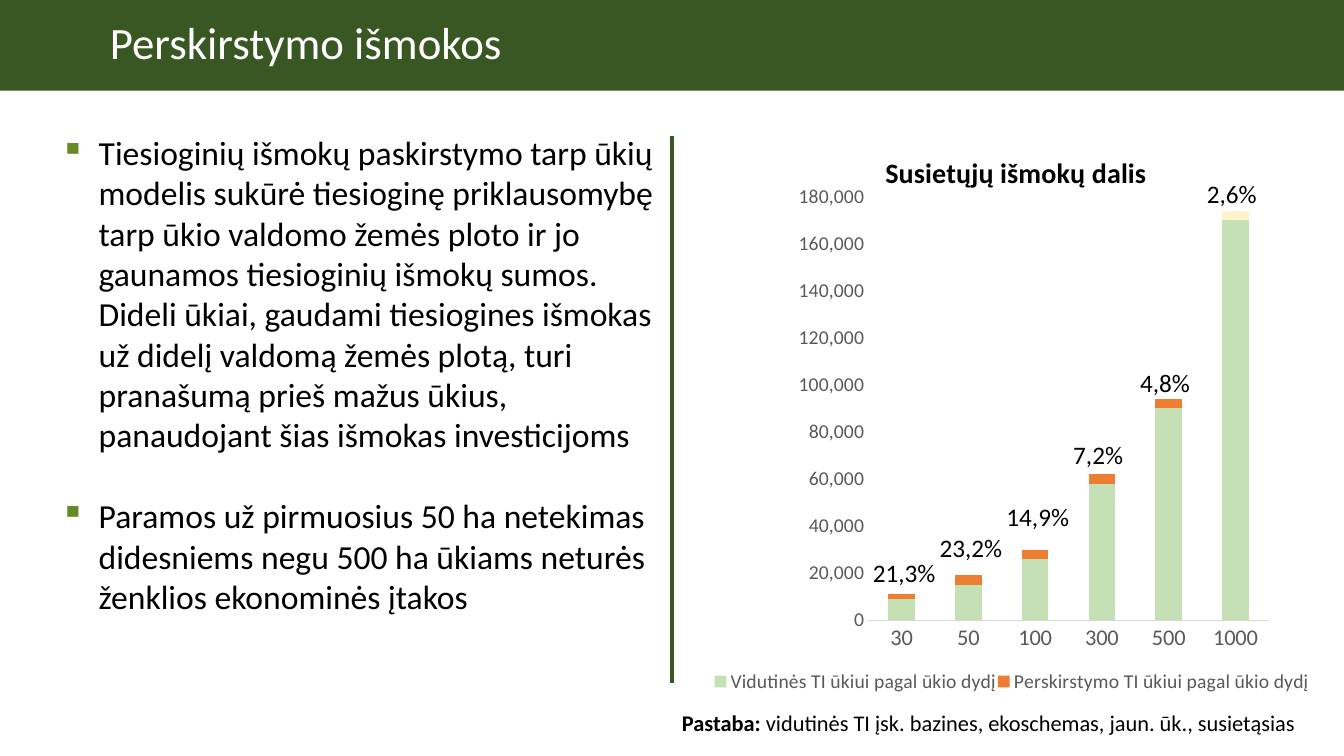
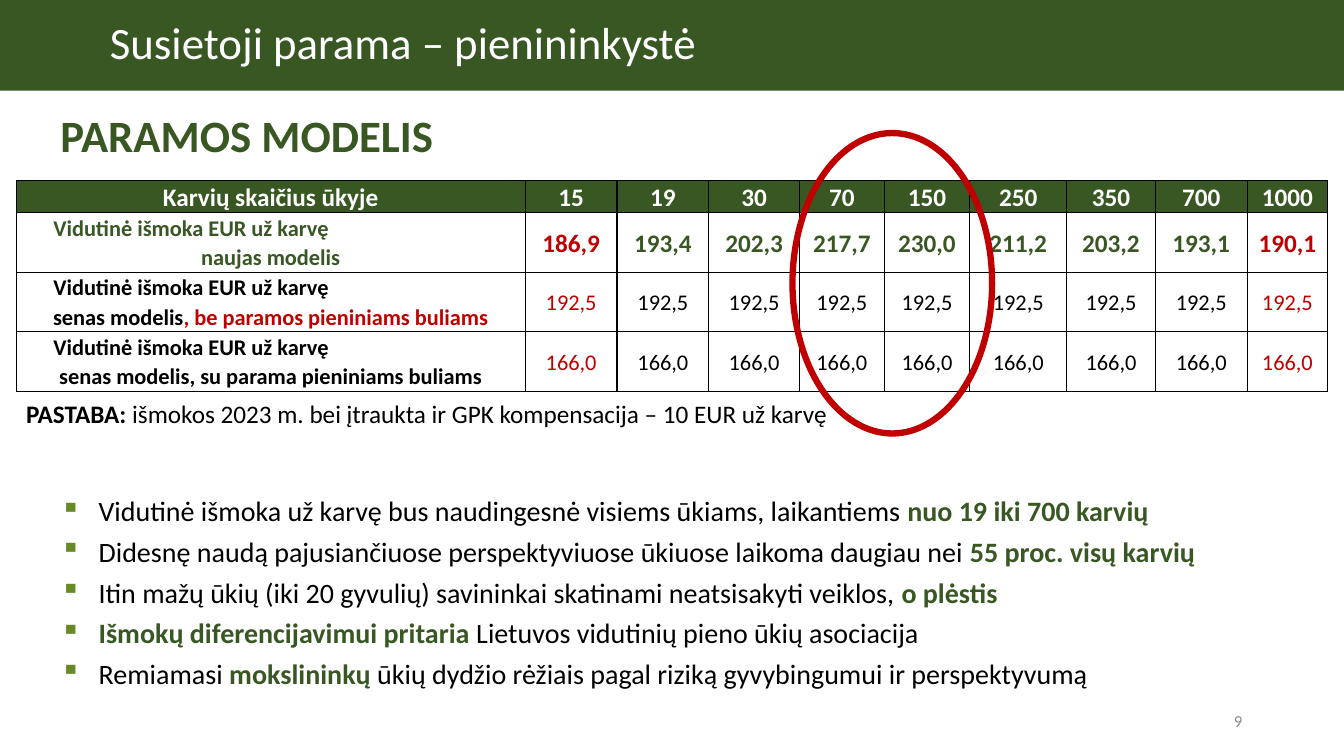
from dataclasses import dataclass

from lxml.etree import SubElement
from pptx import Presentation
from pptx.chart.data import CategoryChartData
from pptx.dml.color import RGBColor
from pptx.enum.chart import XL_CHART_TYPE, XL_LEGEND_POSITION, XL_TICK_MARK
from pptx.enum.shapes import MSO_CONNECTOR, MSO_SHAPE
from pptx.enum.text import MSO_ANCHOR, PP_ALIGN
from pptx.oxml import parse_xml
from pptx.oxml.ns import nsdecls, qn
from pptx.util import Inches, Pt


@dataclass(frozen=True)
class Theme:
    """Colours, font and type sizes shared by the slides."""
    font: str = "Calibri"
    green: str = "385723"
    bullet: str = "678A26"
    red: str = "C00000"
    black: str = "000000"
    white: str = "FFFFFF"
    grey: str = "595959"
    pale: str = "8C8C8C"
    rule: str = "D9D9D9"
    title: int = 32
    body: int = 24
    points: int = 20
    label: int = 18
    note: int = 16
    small: int = 14
    number: int = 12


T = Theme()
W, H = 13.33, 7.5
MID = W / 2
BAND = 0.12 * H

FARM_TITLE = "Perskirstymo išmokos"
FARM_POINTS = [
    [("Tiesioginių išmokų paskirstymo tarp ūkių modelis sukūrė tiesioginę priklausomybę "
      "tarp ūkio valdomo žemės ploto ir jo gaunamos tiesioginių išmokų sumos. Dideli ūkiai, "
      "gaudami tiesiogines išmokas už didelį valdomą žemės plotą, turi pranašumą prieš mažus "
      "ūkius, panaudojant šias išmokas investicijoms",)],
    [("Paramos už pirmuosius 50 ha netekimas didesniems negu 500 ha ūkiams neturės "
      "ženklios ekonominės įtakos",)],
]
FARM_NOTE = [("Pastaba: ", T.black, True),
             ("vidutinės TI įsk. bazines, ekoschemas, jaun. ūk., susietąsias",)]
CHART_TITLE = "Susietųjų išmokų dalis"
SIZES = ["30", "50", "100", "300", "500", "1000"]
SERIES = [
    ("Vidutinės TI ūkiui pagal ūkio dydį", "C5E0B4", [9000, 15000, 26000, 58000, 90000, 170000]),
    ("Perskirstymo TI ūkiui pagal ūkio dydį", "ED7D31", [2000, 4000, 4000, 4000, 4000, 4000]),
]
LAST_POINT = "FFF2CC"
SHARES = [("21,3%", 5.48), ("23,2%", 5.23), ("14,9%", 4.92),
          ("7,2%", 4.31), ("4,8%", 3.59), ("2,6%", 1.72)]
CHART = (7.07, 1.22, 5.93, 6.09)
PLOT = (0.26, 0.12, 0.67, 0.69)

MILK_TITLE = "Susietoji parama – pienininkystė"
MILK_HEADING = "PARAMOS MODELIS"
HEADER = ["Karvių skaičius ūkyje", "15", "19", "30", "70", "150", "250", "350", "700", "1000"]
ROW_LEAD = "Vidutinė išmoka EUR už karvę"
ROWS = [
    ([("naujas modelis", T.green, True)], T.green, True, T.label,
     ["186,9", "193,4", "202,3", "217,7", "230,0", "211,2", "203,2", "193,1", "190,1"]),
    ([("senas modelis", T.black, True), (", be paramos pieniniams buliams", T.red, True)],
     T.black, False, T.note, ["192,5"] * 9),
    ([("senas modelis, su parama pieniniams buliams", T.black, True)],
     T.black, False, T.note, ["166,0"] * 9),
]
COLS = [5.05, 0.91, 0.91, 0.9, 0.84, 0.85, 0.96, 0.88, 0.91, 0.8]
ROW_H = [0.32, 0.59, 0.59, 0.59]
MILK_NOTE = [("PASTABA: ", T.black, True),
             ("išmokos 2023 m. bei įtraukta ir GPK kompensacija – 10 EUR už karvę",)]
MILK_POINTS = [
    [("Vidutinė išmoka už karvę bus naudingesnė visiems ūkiams, laikantiems ",),
     ("nuo 19 iki 700 karvių", T.green, True)],
    [("Didesnę naudą pajusiančiuose perspektyviuose ūkiuose laikoma daugiau nei ",),
     ("55 proc. visų karvių", T.green, True)],
    [("Itin mažų ūkių (iki 20 gyvulių) savininkai skatinami neatsisakyti veiklos, ",),
     ("o plėstis", T.green, True)],
    [("Išmokų diferencijavimui pritaria", T.green, True),
     (" Lietuvos vidutinių pieno ūkių asociacija",)],
    [("Remiamasi ",), ("mokslininkų", T.green, True),
     (" ūkių dydžio rėžiais pagal riziką gyvybingumui ir perspektyvumą",)],
]


def rgb(color):
    return RGBColor.from_string(color)


def inches(box):
    return [Inches(v) for v in box]


def style(font, size, color=T.black, bold=False):
    font.name, font.size, font.bold = T.font, Pt(size), bold
    font.color.rgb = rgb(color)


def write(p, runs, size):
    for text, *look in runs:
        r = p.add_run()
        r.text = text
        style(r.font, size, *look)


def add_text(s, box, paragraphs, size, wrap=True):
    tf = s.shapes.add_textbox(*inches(box)).text_frame
    tf.word_wrap = wrap
    for i, runs in enumerate(paragraphs):
        write(tf.add_paragraph() if i else tf.paragraphs[0], runs, size)
    return tf


def add_points(s, box, points, size, gap):
    for i, p in enumerate(add_text(s, box, points, size).paragraphs):
        p.space_before = Pt(gap if i else 0)
        pPr = p._p.get_or_add_pPr()
        pPr.set("marL", str(Inches(0.88)))
        pPr.set("indent", str(Inches(-0.38)))
        SubElement(SubElement(pPr, qn("a:buClr")), qn("a:srgbClr")).set("val", T.bullet)
        SubElement(pPr, qn("a:buChar")).set("char", "▪")


def add_slide(prs, title):
    s = prs.slides.add_slide(prs.slide_layouts[6])
    sp = s.shapes.add_shape(MSO_SHAPE.RECTANGLE, *inches((0, 0, W, BAND)))
    sp.shadow.inherit = False
    sp.fill.solid()
    sp.fill.fore_color.rgb = rgb(T.green)
    sp.line.fill.background()
    tf = sp.text_frame
    tf.margin_left = Inches(1.09)
    tf.vertical_anchor = MSO_ANCHOR.MIDDLE
    p = tf.paragraphs[0]
    p.alignment, p.line_spacing = PP_ALIGN.LEFT, 0.9
    write(p, [(title, T.white)], T.title)
    return s


def layout_xml(*values, inner=False):
    target = '<c:layoutTarget val="inner"/>' if inner else ""
    modes = "".join(f'<c:{k}Mode val="edge"/>' for k in "xy")
    parts = "".join(f'<c:{k} val="{v}"/>' for k, v in zip("xywh", values))
    return parse_xml(f'<c:layout {nsdecls("c")}><c:manualLayout>{target}{modes}{parts}'
                     "</c:manualLayout></c:layout>")


def place(parent, layout, after=None):
    for old in parent.findall(qn("c:layout")):
        parent.remove(old)
    if after is None:
        parent.insert(0, layout)
    else:
        parent.find(qn(after)).addnext(layout)


def add_payments_chart(s):
    data = CategoryChartData(number_format="#,##0")
    data.categories = SIZES
    for name, _, values in SERIES:
        data.add_series(name, values)
    chart = s.shapes.add_chart(XL_CHART_TYPE.COLUMN_STACKED, *inches(CHART), data).chart
    style(chart.font, 10)
    chart.has_title = True
    tf = chart.chart_title.text_frame
    tf.text = CHART_TITLE
    style(tf.paragraphs[0].runs[0].font, T.points, T.black, True)
    chart.has_legend = True
    chart.legend.position = XL_LEGEND_POSITION.BOTTOM
    chart.legend.include_in_layout = False
    style(chart.legend.font, T.small, T.grey)

    plot = chart.plots[0]
    plot.gap_width, plot.overlap, plot.vary_by_categories = 150, 100, False
    for series, (_, color, _) in zip(plot.series, SERIES):
        series.format.fill.solid()
        series.format.fill.fore_color.rgb = rgb(color)
    fill = plot.series[1].points[len(SIZES) - 1].format.fill
    fill.solid()
    fill.fore_color.rgb = rgb(LAST_POINT)

    for axis, size in ((chart.category_axis, T.note), (chart.value_axis, T.small)):
        axis.major_tick_mark = axis.minor_tick_mark = XL_TICK_MARK.NONE
        axis.has_major_gridlines = False
        style(axis.tick_labels.font, size, T.grey)
    line = chart.category_axis.format.line
    line.color.rgb, line.width = rgb(T.rule), Pt(0.75)
    axis = chart.value_axis
    axis.format.line.fill.background()
    axis.minimum_scale, axis.maximum_scale, axis.major_unit = 0, 180000, 20000
    axis.tick_labels.number_format = "#,##0"
    axis.tick_labels.number_format_is_linked = False

    root = chart.element.find(qn("c:chart"))
    place(root.find(qn("c:title")), layout_xml(0.28, 0.04), "c:tx")
    place(root.find(qn("c:legend")), layout_xml(0, 0.88, 1, 0.06), "c:legendPos")
    place(root.find(qn("c:plotArea")), layout_xml(*PLOT, inner=True))


def farm_slide(prs):
    s = add_slide(prs, FARM_TITLE)
    add_points(s, (0, 1.26, MID, 5.15), FARM_POINTS, T.body, 29)
    divider = s.shapes.add_connector(MSO_CONNECTOR.STRAIGHT, *inches((MID, 1.35, MID, 6.78)))
    divider.line.color.rgb, divider.line.width = rgb(T.green), Pt(2.25)
    SubElement(divider._element.spPr, qn("a:effectLst"))
    add_payments_chart(s)
    step = CHART[2] * PLOT[2] / len(SIZES)
    for i, (share, top) in enumerate(SHARES):
        add_text(s, (8.56 + i * step, top, 0.86, 0.4), [[(share,)]], T.label)
    add_text(s, (MID, 6.99, MID, 0.37), [FARM_NOTE], T.note)


def format_cell(cell, fill=None):
    cell.vertical_anchor = MSO_ANCHOR.MIDDLE
    cell.margin_left = cell.margin_right = Inches(0.07)
    cell.margin_top = cell.margin_bottom = 0
    if fill:
        cell.fill.solid()
        cell.fill.fore_color.rgb = rgb(fill)
    else:
        cell.fill.background()
    tcPr = cell._tc.get_or_add_tcPr()
    for i, side in enumerate("LRTB"):
        tcPr.insert(i, parse_xml(
            f'<a:ln{side} {nsdecls("a")} w="{Pt(1)}"><a:solidFill>'
            f'<a:srgbClr val="{T.black}"/></a:solidFill></a:ln{side}>'))
    for p in cell.text_frame.paragraphs:
        p.alignment, p.line_spacing = PP_ALIGN.CENTER, 1.07


def add_payments_table(s):
    box = (0.16, 1.79, sum(COLS), sum(ROW_H))
    table = s.shapes.add_table(len(ROW_H), len(COLS), *inches(box)).table
    table.first_row = table.horz_banding = False
    for col, width in zip(table.columns, COLS):
        col.width = Inches(width)
    for row, height in zip(table.rows, ROW_H):
        row.height = Inches(height)
    for j, text in enumerate(HEADER):
        cell = table.cell(0, j)
        write(cell.text_frame.paragraphs[0], [(text, T.white, True)], T.label)
        format_cell(cell, T.green)
    for i, (model, color, bold, size, values) in enumerate(ROWS, 1):
        cell = table.cell(i, 0)
        tf = cell.text_frame
        write(tf.paragraphs[0], [(ROW_LEAD, color, True)], T.note)
        write(tf.add_paragraph(), model, T.note)
        format_cell(cell)
        lead = tf.paragraphs[0]
        lead.alignment = PP_ALIGN.LEFT
        lead._p.get_or_add_pPr().set("marL", str(Inches(0.3)))
        for j, value in enumerate(values, 1):
            cell = table.cell(i, j)
            edge = j in (1, len(values))
            write(cell.text_frame.paragraphs[0], [(value, T.red if edge else color, bold)], size)
            format_cell(cell)


def milk_slide(prs):
    s = add_slide(prs, MILK_TITLE)
    number = add_text(s, (9.42, 6.95, 3, 0.4), [[("9", T.pale)]], T.number)
    number.vertical_anchor = MSO_ANCHOR.MIDDLE
    number.paragraphs[0].alignment = PP_ALIGN.RIGHT
    add_text(s, (0.5, 1.02, 6, 0.64), [[(MILK_HEADING, T.green, True)]], T.title)
    add_points(s, (0, 4.85, 12.26, 2.1), MILK_POINTS, T.points, 5)
    add_payments_table(s)
    add_text(s, (0.16, 3.9, 8.16, 0.4), [MILK_NOTE], T.label, wrap=False)
    ring = s.shapes.add_shape(MSO_SHAPE.OVAL, *inches((7.86, 1.32, 1.98, 2.98)))
    ring.shadow.inherit = False
    ring.fill.background()
    ring.line.color.rgb, ring.line.width = rgb(T.red), Pt(4.5)


def main():
    prs = Presentation()
    prs.slide_width, prs.slide_height = inches((W, H))
    farm_slide(prs)
    milk_slide(prs)
    prs.save("out.pptx")


if __name__ == "__main__":
    main()
